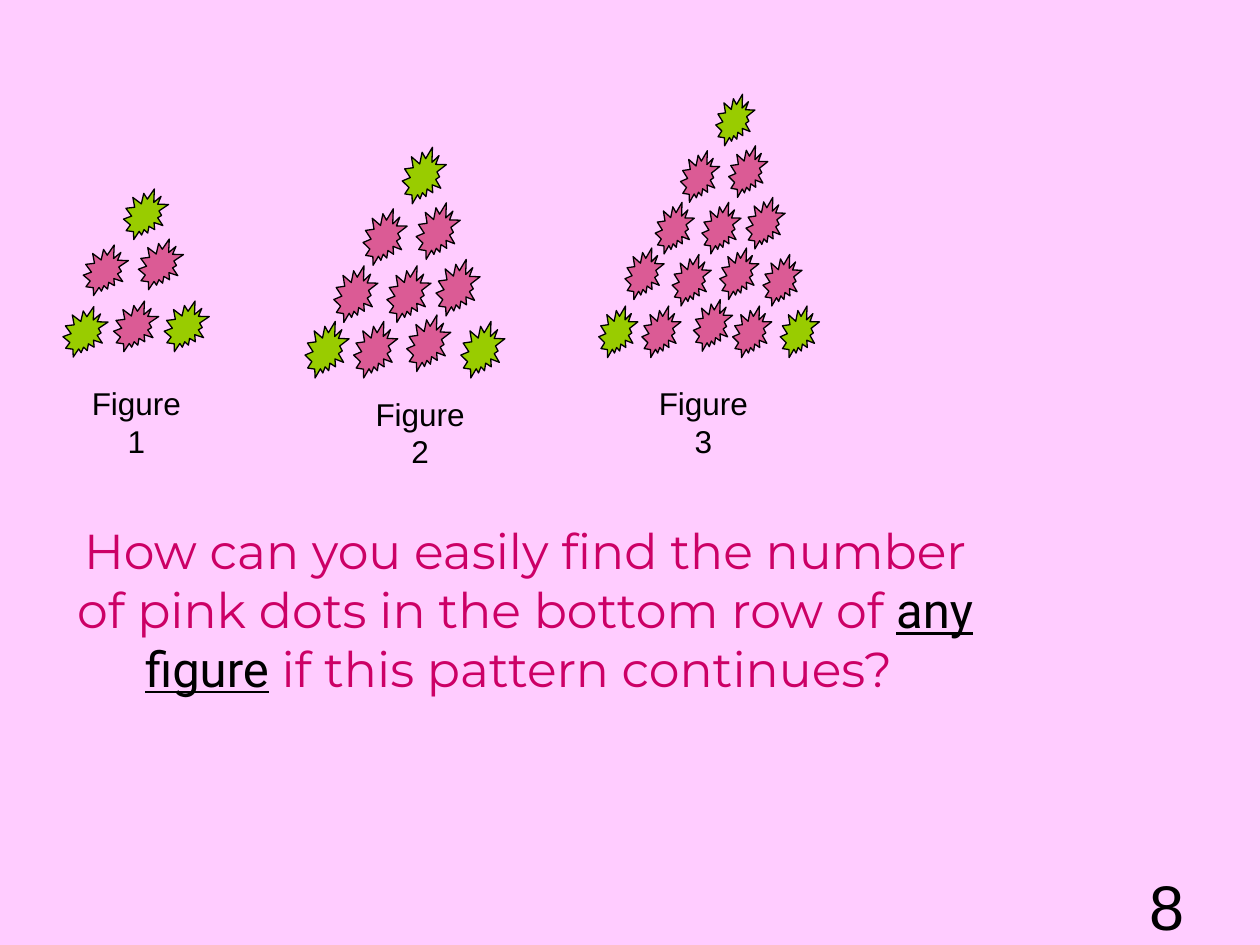
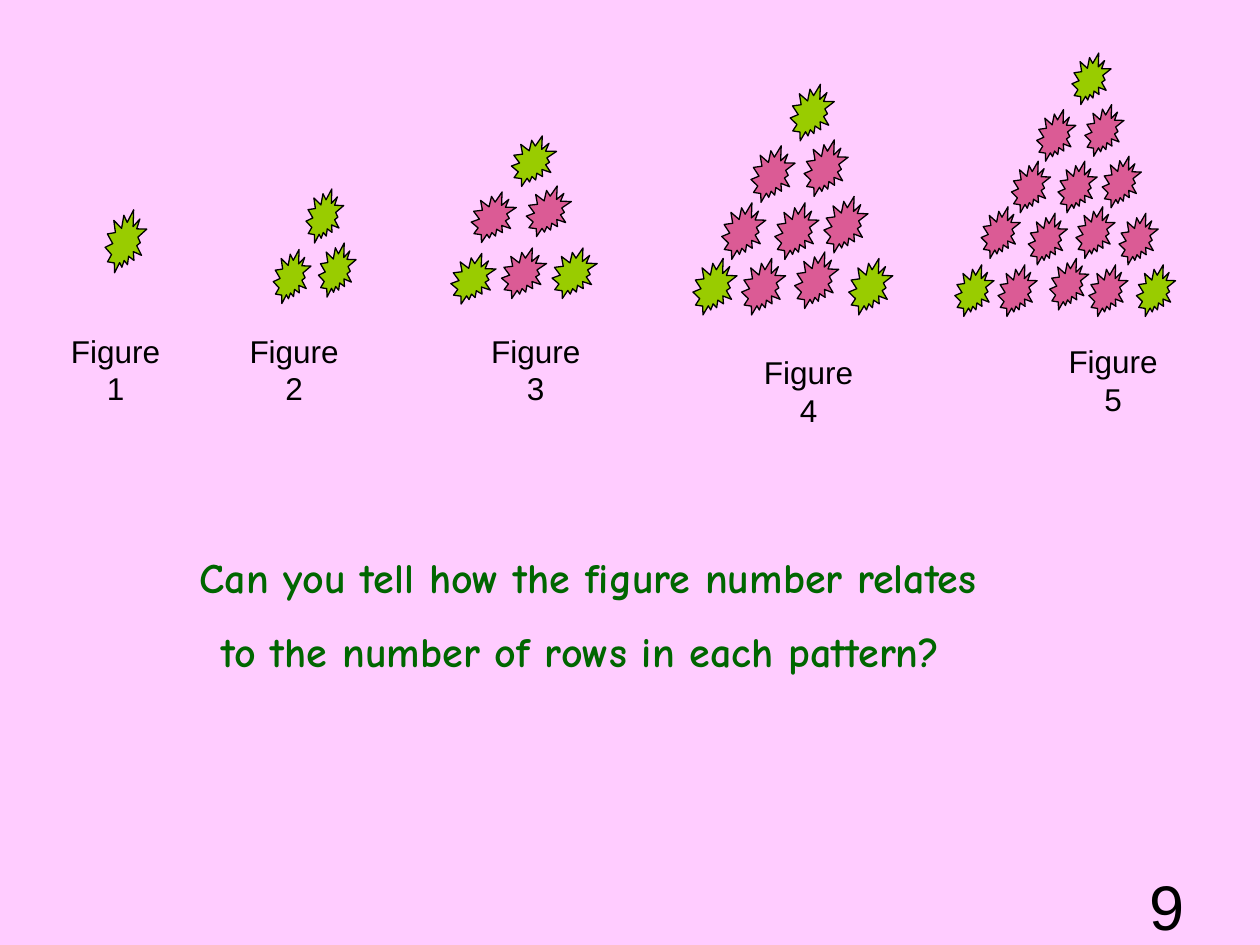
"""Build two slides on growing triangular dot patterns and the questions about them."""
from pptx import Presentation
from pptx.dml.color import RGBColor
from pptx.enum.shapes import MSO_SHAPE as Shape
from pptx.enum.text import MSO_ANCHOR as Anchor, PP_ALIGN as Align
from pptx.util import Cm, Pt

BLACK = RGBColor(0x00, 0x00, 0x00)
BACKGROUND = RGBColor(0xFF, 0xCC, 0xFF)
PINK_DOT = RGBColor(0xDB, 0x5B, 0x95)
GREEN_DOT = RGBColor(0x99, 0xCC, 0x00)
MAGENTA = RGBColor(0xCC, 0x00, 0x66)
DARK_GREEN = RGBColor(0x00, 0x66, 0x00)

# Keys are row counts; each row lists dot offsets in centimetres.
PATTERNS = {
    1: {"dot": (0.84, 1.27), "rows": [[(0, 0)]]},
    2: {"dot": (0.76, 1.09), "rows": [
        [(0.66, 0)],
        [(0, 1.22), (0.91, 1.09)]]},
    3: {"dot": (0.91, 1.02), "rows": [
        [(1.22, 0)],
        [(0.41, 1.13), (1.52, 1.01)],
        [(0, 2.37), (1.02, 2.26), (2.04, 2.26)]]},
    4: {"dot": (0.89, 1.14), "rows": [
        [(1.96, 0)],
        [(1.17, 1.24), (2.24, 1.12)],
        [(0.58, 2.39), (1.65, 2.39), (2.64, 2.26)],
        [(0, 3.51), (0.98, 3.51), (2.05, 3.38), (3.14, 3.51)]]},
    5: {"dot": (0.79, 1.04), "rows": [
        [(2.36, 0)],
        [(1.65, 1.14), (2.62, 1.04)],
        [(1.14, 2.18), (2.08, 2.18), (2.97, 2.08)],
        [(0.53, 3.1), (1.48, 3.23), (2.44, 3.1), (3.31, 3.23)],
        [(0, 4.27), (0.87, 4.27), (1.91, 4.14), (2.7, 4.27), (3.66, 4.27)]]},
}

ANY_FIGURE = {"font": "Roboto", "color": BLACK, "underline": True}

SLIDES = [
    {
        "number": "8",
        "figures": [
            (3, (1.27, 3.81), (1.48, 7.62)),
            (4, (6.15, 2.97), (7.2, 7.83)),
            (5, (12.07, 1.9), (12.91, 7.62)),
        ],
        "question": [[
            ("How can you easily find the number of pink dots in the bottom row of ", {}),
            ("any figure", ANY_FIGURE),
            (" if this pattern continues? ", {}),
        ]],
        "box": (1.27, 10.37, 18.63, 5),
        "style": {"font": "Montserrat", "size": 28, "color": MAGENTA},
    },
    {
        "number": "9",
        "figures": [
            (1, (2.12, 4.23), (1.06, 6.56)),
            (2, (5.51, 3.81), (4.66, 6.56)),
            (3, (9.09, 2.74), (9.53, 6.56)),
            (4, (13.97, 1.7), (15.03, 6.99)),
            (5, (19.25, 1.07), (21.17, 6.77)),
        ],
        "question": [
            [("Can you tell how the figure number relates", {})],
            [("to the number of rows in each pattern? ", {})],
        ],
        "box": (1.27, 11, 21.17, 2.82),
        "style": {"font": "Comic Neue", "size": 24, "color": DARK_GREEN, "bold": True},
    },
]
CAPTION_SIZE = (2.54, 1.06)
NUMBER_BOX = (18.2, 17.36, 5.93, 1.32)


def add_text(slide, paragraphs, box, align=Align.CENTER, wrap=True, gap=13, **style):
    """Add a text box whose paragraphs are lists of (text, format changes)."""
    frame = slide.shapes.add_textbox(*map(Cm, box)).text_frame
    frame.word_wrap = wrap
    frame.vertical_anchor = Anchor.TOP
    for index, runs in enumerate(paragraphs):
        paragraph = frame.add_paragraph() if index else frame.paragraphs[0]
        paragraph.alignment = align
        paragraph.space_before = Pt(gap if index else 0)
        for text, changes in runs:
            look = {"font": "Arial", "size": 18, "color": BLACK, **style, **changes}
            run = paragraph.add_run()
            run.text = text
            run.font.name = look["font"]
            run.font.size = Pt(look["size"])
            run.font.color.rgb = look["color"]
            run.font.bold = look.get("bold", False)
            run.font.underline = look.get("underline", False)


def add_pattern(slide, row_count, origin):
    """Draw a triangle of dots with green corners and pink dots elsewhere."""
    pattern = PATTERNS[row_count]
    group = slide.shapes.add_group_shape()
    for row_index, row in enumerate(pattern["rows"]):
        for index, (x, y) in enumerate(row):
            in_end_row = row_index in (0, row_count - 1)
            is_corner = in_end_row and index in (0, len(row) - 1)
            box = (origin[0] + x, origin[1] + y, *pattern["dot"])
            dot = group.shapes.add_shape(Shape.EXPLOSION2, *map(Cm, box))
            dot.shadow.inherit = False
            dot.fill.solid()
            dot.fill.fore_color.rgb = GREEN_DOT if is_corner else PINK_DOT
            dot.line.color.rgb = BLACK
            dot.line.width = Pt(0.75)


def main():
    """Build and save the presentation."""
    presentation = Presentation()
    presentation.slide_width, presentation.slide_height = Cm(25.4), Cm(19.05)
    background = presentation.slide_master.background.fill
    background.solid()
    background.fore_color.rgb = BACKGROUND
    for content in SLIDES:
        slide = presentation.slides.add_slide(presentation.slide_layouts[6])
        for figure, (row_count, origin, caption) in enumerate(content["figures"], 1):
            add_pattern(slide, row_count, origin)
            add_text(slide, [[(f"Figure {figure}", {})]], caption + CAPTION_SIZE, wrap=False)
        add_text(slide, content["question"], content["box"], **content["style"])
        add_text(slide, [[(content["number"], {})]], NUMBER_BOX, align=Align.RIGHT, size=36)
    presentation.save("out.pptx")


if __name__ == "__main__":
    main()
